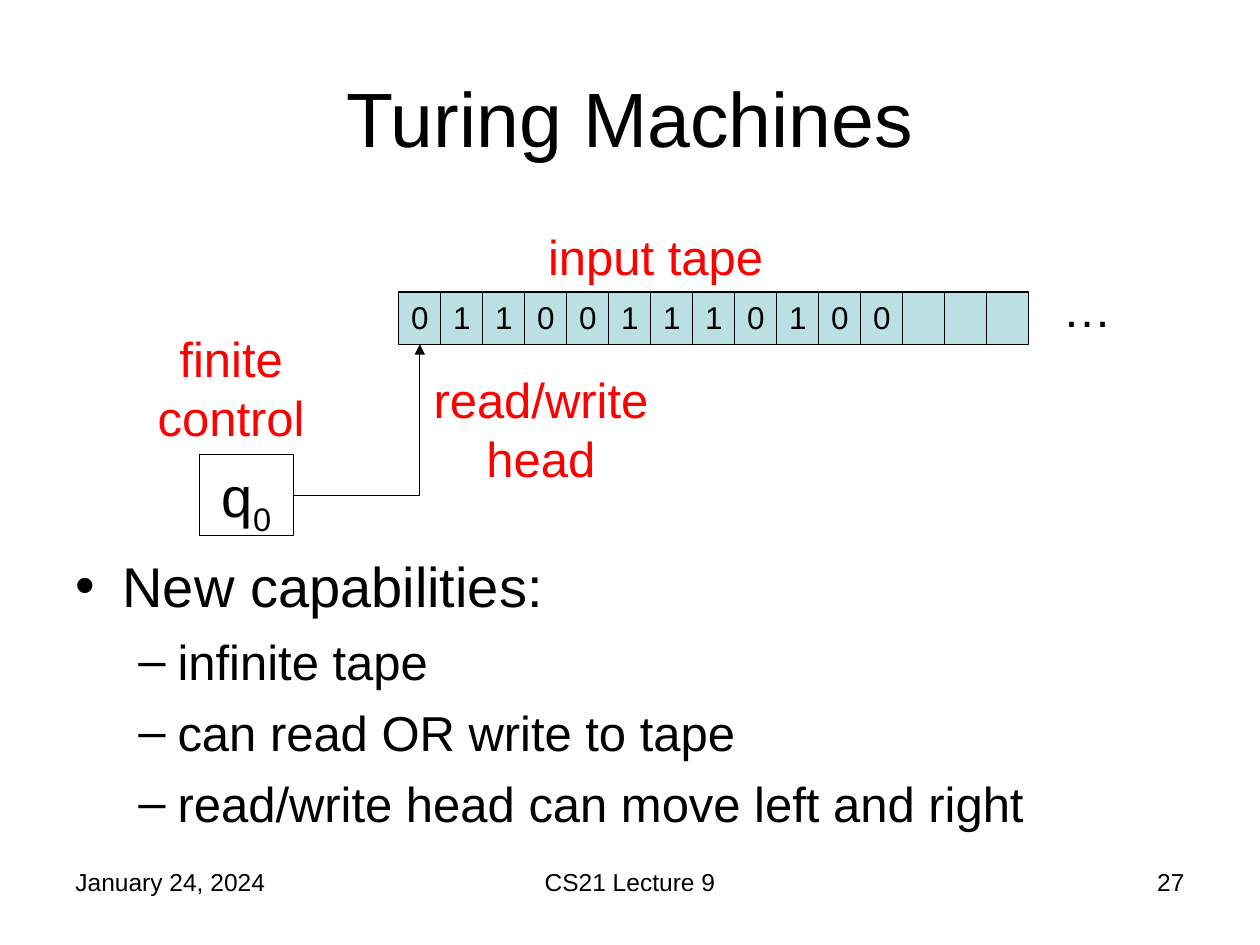
"""Build a slide that explains the parts of a Turing machine."""
from lxml import etree
from pptx import Presentation
from pptx.dml.color import RGBColor
from pptx.enum.shapes import MSO_CONNECTOR, MSO_SHAPE
from pptx.enum.text import MSO_ANCHOR, MSO_AUTO_SIZE, PP_ALIGN
from pptx.oxml.ns import qn
from pptx.util import Cm, Pt

ELBOW = MSO_CONNECTOR.ELBOW
RECT = MSO_SHAPE.RECTANGLE
TOP, MIDDLE = MSO_ANCHOR.TOP, MSO_ANCHOR.MIDDLE
NO_AUTOFIT = MSO_AUTO_SIZE.NONE
LEFT, CENTER, RIGHT = PP_ALIGN.LEFT, PP_ALIGN.CENTER, PP_ALIGN.RIGHT

BLACK = RGBColor(0x00, 0x00, 0x00)
RED = RGBColor(0xFF, 0x00, 0x00)
TAPE_BLUE = RGBColor(0xBB, 0xE0, 0xE3)

FONT = "Arial"
TITLE_ONLY = 5
TAPE = "011001110100"
TAPE_CELLS = 15
TAPE_LEFT, TAPE_TOP, TAPE_WIDTH, CELL_HEIGHT = 8.04, 5.89, 12.7, 1.05
LABELS = [
    ("input tape", (10.8, 4.45, 5.92, 1.45), RED, LEFT),
    ("finite control", (2.33, 6.5, 4.66, 2.62), RED, CENTER),
    ("read/write head", (8.26, 7.32, 5.29, 2.62), RED, CENTER),
    ("…", (21.17, 5.5, 1.9, 1.45), BLACK, LEFT),
]
FOOTERS = [
    ("January 24, 2024", 1.27, 5.93, LEFT),
    ("CS21 Lecture 9", 8.68, 8.04, CENTER),
    ("27", 18.2, 5.93, RIGHT),
]
CAPABILITIES = [
    ("New capabilities:", 0),
    ("infinite tape", 1),
    ("can read OR write to tape", 1),
    ("read/write head can move left and right", 1),
]
BULLET_LEVELS = [("•", 0.95, 0.95, 32), ("–", 2.06, 0.79, 28)]


def add_run(p, text, size=28, color=BLACK, baseline=None):
    """Append a formatted run to a paragraph."""
    r = p.add_run()
    r.text = text
    r.font.name, r.font.size = FONT, Pt(size)
    r.font.color.rgb = color
    if baseline is not None:
        r.font._element.set("baseline", str(baseline))


def write_text(sp, text, align=LEFT, anchor=TOP, **font):
    """Put one formatted paragraph into a shape and return it."""
    tf = sp.text_frame
    tf.word_wrap = True
    tf.auto_size = NO_AUTOFIT
    tf.vertical_anchor = anchor
    p = tf.paragraphs[0]
    p.alignment = align
    add_run(p, text, **font)
    return p


def add_label(s, text, box, **style):
    """Add a text box with one paragraph."""
    sp = s.shapes.add_textbox(*map(Cm, box))
    write_text(sp, text, **style)


def add_box(s, box, fill=None):
    """Add an outlined rectangle, filled if a colour is given."""
    sp = s.shapes.add_shape(RECT, *map(Cm, box))
    sp.shadow.inherit = False
    if fill is None:
        sp.fill.background()
    else:
        sp.fill.solid()
        sp.fill.fore_color.rgb = fill
    sp.line.color.rgb = BLACK
    sp.line.width = Pt(0.75)
    sp.text_frame.margin_left = sp.text_frame.margin_right = 0
    return sp


def add_tape(s):
    """Add the row of tape cells and return the first one."""
    width = TAPE_WIDTH / TAPE_CELLS
    cells = []
    for i, symbol in enumerate(TAPE.ljust(TAPE_CELLS)):
        box = (TAPE_LEFT + i * width, TAPE_TOP, width, CELL_HEIGHT)
        sp = add_box(s, box, TAPE_BLUE)
        if symbol.strip():
            write_text(sp, symbol, align=CENTER, size=18)
        cells.append(sp)
    return cells[0]


def add_control(s):
    """Add the finite control box holding its state."""
    sp = add_box(s, (4.02, 9.17, 1.9, 1.63))
    p = write_text(sp, "q", align=CENTER, size=32)
    add_run(p, "0", size=32, baseline=-25000)
    return sp


def add_head_arrow(s, control, cell):
    """Join the control box to a tape cell with a one-bend arrow."""
    cxn = s.shapes.add_connector(ELBOW, 0, 0, 0, 0)
    cxn.begin_connect(control, 3)
    cxn.end_connect(cell, 2)
    cxn.line.color.rgb = BLACK
    cxn.line.width = Pt(0.75)
    sp_pr = cxn._element.spPr
    sp_pr.find(qn("a:prstGeom")).set("prst", "bentConnector2")
    ln = sp_pr.find(qn("a:ln"))
    etree.SubElement(ln, qn("a:tailEnd"), type="triangle")
    etree.SubElement(sp_pr, qn("a:effectLst"))


def add_bullets(s, items, box):
    """Add a two-level bulleted list."""
    tf = s.shapes.add_textbox(*map(Cm, box)).text_frame
    tf.word_wrap = True
    for i, (text, level) in enumerate(items):
        p = tf.add_paragraph() if i else tf.paragraphs[0]
        char, margin, hanging, size = BULLET_LEVELS[level]
        p.level = level
        p.space_before = Pt(7 if i else 0)
        p_pr = p._p.get_or_add_pPr()
        p_pr.set("marL", str(Cm(margin)))
        p_pr.set("indent", str(-Cm(hanging)))
        etree.SubElement(p_pr, qn("a:buFont"), typeface=FONT)
        etree.SubElement(p_pr, qn("a:buChar"), char=char)
        add_run(p, text, size=size)


def add_title(s, text):
    """Move and fill the title placeholder."""
    sp = s.shapes.title
    sp.left, sp.top, sp.width, sp.height = map(Cm, (1.27, 0.76, 22.86, 3.18))
    write_text(sp, text, align=CENTER, anchor=MIDDLE, size=44)


def main():
    """Build and save the slide."""
    prs = Presentation()
    prs.slide_width, prs.slide_height = Cm(25.4), Cm(19.05)
    s = prs.slides.add_slide(prs.slide_layouts[TITLE_ONLY])
    add_title(s, "Turing Machines")
    add_bullets(s, CAPABILITIES, (1.27, 11, 22.86, 6.99))
    first_cell = add_tape(s)
    control = add_control(s)
    add_head_arrow(s, control, first_cell)
    for text, box, color, align in LABELS:
        add_label(s, text, box, color=color, align=align)
    for text, left, width, align in FOOTERS:
        add_label(s, text, (left, 17.35, width, 1.32), size=14, align=align)
    prs.save("out.pptx")


if __name__ == "__main__":
    main()
